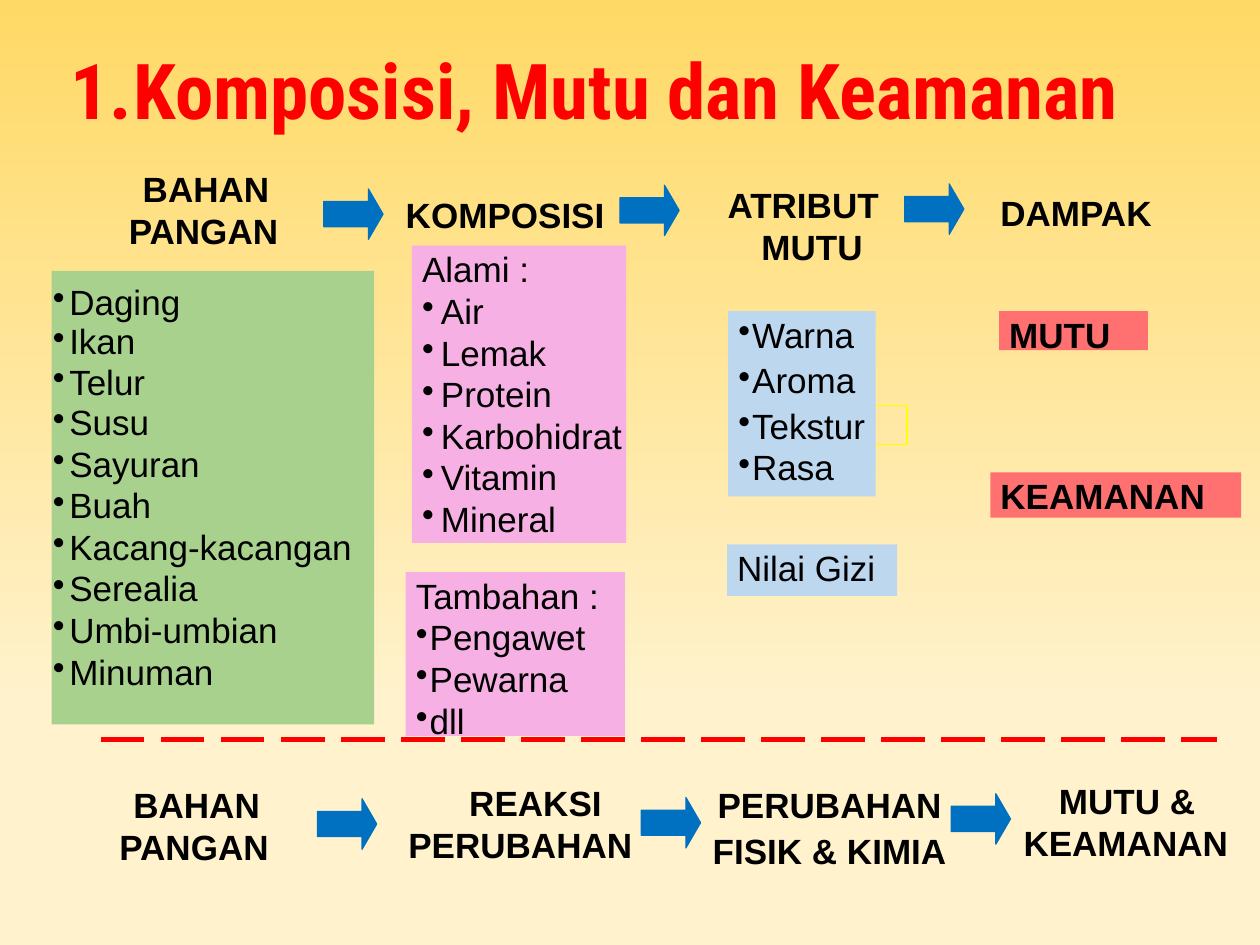
from dataclasses import dataclass

from lxml import etree
from pptx import Presentation
from pptx.dml.color import RGBColor
from pptx.enum.dml import MSO_LINE
from pptx.enum.shapes import MSO_CONNECTOR, MSO_SHAPE
from pptx.enum.text import MSO_ANCHOR, PP_ALIGN
from pptx.oxml.ns import qn
from pptx.util import Inches, Pt

RECTANGLE, RIGHT_ARROW = MSO_SHAPE.RECTANGLE, MSO_SHAPE.RIGHT_ARROW
STRAIGHT, LONG_DASH = MSO_CONNECTOR.STRAIGHT, MSO_LINE.LONG_DASH
TOP, LEFT, CENTER = MSO_ANCHOR.TOP, PP_ALIGN.LEFT, PP_ALIGN.CENTER


@dataclass(frozen=True)
class Theme:
    sky: str = "FFD966"
    cream: str = "FFF2CC"
    red: str = "FF0000"
    yellow: str = "FFFF00"
    black: str = "000000"
    blue: str = "0070C0"
    green: str = "A9D18E"
    pink: str = "F6B0E4"
    pale_blue: str = "BDD7EE"
    coral: str = "FF7171"
    title_font: str = "Roboto Condensed"
    body_font: str = "Arial"
    title_size: int = 44
    body_size: int = 20


THEME = Theme()


@dataclass(frozen=True)
class Area:
    left: float
    top: float
    width: float
    height: float

    def lengths(self):
        return [Inches(n) for n in (self.left, self.top, self.width, self.height)]


@dataclass(frozen=True)
class Entry:
    text: str
    before: float = 0.7
    bullet: bool = True
    spacing: object = 0.96


@dataclass(frozen=True)
class Panel:
    area: Area
    color: str
    entries: list
    margin: float = 0.08
    hanging: float = 0
    top_inset: float = 0.04
    bold: bool = False


@dataclass(frozen=True)
class Heading:
    area: Area
    lines: list
    margin: float = 0.08
    indent: float = 0
    spacing: float = 1.0
    align: object = CENTER


def color_of(value: str) -> RGBColor:
    return RGBColor.from_string(value)


def prepare_frame(box, top_inset: float):
    frame = box.text_frame
    frame.word_wrap = True
    frame.vertical_anchor = TOP
    frame.margin_left = frame.margin_right = frame.margin_bottom = 0
    frame.margin_top = Inches(top_inset)
    return frame


def add_para(frame, index: int, text: str, margin: float, indent: float):
    para = frame.paragraphs[0] if index == 0 else frame.add_paragraph()
    para.text = text
    props = para._p.get_or_add_pPr()
    props.set("marL", str(Inches(margin)))
    props.set("indent", str(Inches(indent)))
    return para


def style_para(para, spacing, bold: bool, align=LEFT) -> None:
    para.alignment = align
    para.line_spacing = spacing
    para.font.name = THEME.body_font
    para.font.size = Pt(THEME.body_size)
    para.font.bold = bold
    para.font.color.rgb = color_of(THEME.black)


def draw_shape(page, kind, area: Area, fill: str | None, line: str | None = None):
    shape = page.shapes.add_shape(kind, *area.lengths())
    shape.shadow.inherit = False
    if fill:
        shape.fill.solid()
        shape.fill.fore_color.rgb = color_of(fill)
    else:
        shape.fill.background()
    if line:
        shape.line.color.rgb = color_of(line)
        shape.line.width = Pt(0.72)
    else:
        shape.line.fill.background()
    return shape


def draw_panel(page, panel: Panel) -> None:
    frame = prepare_frame(draw_shape(page, RECTANGLE, panel.area, panel.color), panel.top_inset)
    for index, entry in enumerate(panel.entries):
        if entry.bullet:
            para = add_para(frame, index, entry.text, panel.margin, -panel.hanging)
            bullet = etree.SubElement(para._p.get_or_add_pPr(), qn("a:buChar"))
            bullet.set("char", "•")
        else:
            para = add_para(frame, index, entry.text, 0.08, 0)
        if index:
            para.space_before = Pt(entry.before)
        style_para(para, entry.spacing, panel.bold)


def draw_heading(page, heading: Heading) -> None:
    frame = prepare_frame(page.shapes.add_textbox(*heading.area.lengths()), 0.04)
    for index, line in enumerate(heading.lines):
        para = add_para(frame, index, line, heading.margin, heading.indent)
        if index:
            para.space_before = Pt(3.1)
        style_para(para, heading.spacing, True, heading.align)


def draw_arrow(page, left: float, top: float) -> None:
    arrow = draw_shape(page, RIGHT_ARROW, Area(left, top, 0.47, 0.4), THEME.blue, THEME.blue)
    arrow.adjustments[0] = 0.5
    arrow.adjustments[1] = 0.29


def draw_title(page) -> None:
    box = page.shapes.add_textbox(*Area(0.55, 0.61, 9.11, 0.74).lengths())
    para = add_para(prepare_frame(box, 0.02), 0, "1.\tKomposisi, Mutu dan Keamanan", 0.01, 0)
    tabs = etree.SubElement(para._p.get_or_add_pPr(), qn("a:tabLst"))
    etree.SubElement(tabs, qn("a:tab"), pos=str(Inches(0.91)), algn="l")
    para.line_spacing = Pt(31.5)
    para.font.name = THEME.title_font
    para.font.size = Pt(THEME.title_size)
    para.font.bold = True
    para.font.color.rgb = color_of(THEME.red)


def draw_divider(page) -> None:
    ends = [Inches(n) for n in (0.8, 5.87, 9.66, 5.87)]
    divider = page.shapes.add_connector(STRAIGHT, *ends)
    divider.line.color.rgb = color_of(THEME.red)
    divider.line.width = Pt(3.12)
    divider.line.dash_style = LONG_DASH
    etree.SubElement(divider._element.spPr, qn("a:effectLst"))


def paint_background(page) -> None:
    fill = page.background.fill
    fill.gradient()
    fill.gradient_angle = 270
    for stop, color, position in zip(fill.gradient_stops, (THEME.sky, THEME.cream), (0, 0.74)):
        stop.color.rgb = color_of(color)
        stop.position = position


FOODS = [Entry("Daging", spacing=Pt(14.5))]
FOODS += [Entry(name, before=0) for name in ("Ikan", "Telur", "Susu")]
FOODS += [Entry(name) for name in ("Sayuran", "Buah", "Kacang-kacangan", "Serealia",
                                   "Umbi-umbian", "Minuman")]
NATURAL = [Entry("Alami :", bullet=False)]
NATURAL += [Entry(name) for name in ("Air", "Lemak", "Protein", "Karbohidrat", "Vitamin", "Mineral")]
ADDED = [Entry("Tambahan :", bullet=False)]
ADDED += [Entry(name) for name in ("Pengawet", "Pewarna", "dll")]
TRAITS = [Entry(name, before=2.9) for name in ("Warna", "Aroma", "Tekstur")] + [Entry("Rasa")]

PANELS = [
    Panel(Area(0.41, 2.15, 2.56, 3.6), THEME.green, FOODS, 0.14, 0.13, top_inset=0.21),
    Panel(Area(7.86, 3.75, 1.99, 0.36), THEME.coral, [Entry("KEAMANAN", bullet=False)], bold=True),
    Panel(Area(3.22, 4.54, 1.74, 1.3), THEME.pink, ADDED, 0.19, 0.11),
    Panel(Area(5.78, 2.47, 1.17, 1.47), THEME.pale_blue, TRAITS, 0.19, 0.11),
    Panel(Area(7.93, 2.47, 1.18, 0.31), THEME.coral, [Entry("MUTU", bullet=False)], bold=True),
    Panel(Area(3.27, 1.95, 1.7, 2.36), THEME.pink, NATURAL, 0.23, 0.15),
    Panel(Area(5.77, 4.32, 1.35, 0.41), THEME.pale_blue, [Entry("Nilai Gizi", bullet=False)]),
]
HEADINGS = [
    Heading(Area(7.86, 1.5, 1.37, 0.26), ["DAMPAK"], spacing=0.96, align=LEFT),
    Heading(Area(3.14, 1.52, 1.69, 0.29), ["KOMPOSISI"], spacing=0.96, align=LEFT),
    Heading(Area(5.47, 1.42, 1.73, 0.53), ["ATRIBUT MUTU"], 0.22, -0.14),
    Heading(Area(0.58, 1.29, 1.99, 0.54), ["BAHAN PANGAN"], indent=0.04),
    Heading(Area(5.38, 6.2, 2.33, 0.53), ["PERUBAHAN", "FISIK & KIMIA"], spacing=0.96),
    Heading(Area(3.04, 6.16, 2.1, 0.53), ["REAKSI PERUBAHAN"], indent=0.24),
    Heading(Area(0.49, 6.18, 2.02, 0.32), ["BAHAN PANGAN"], indent=0.04),
    Heading(Area(7.94, 6.15, 1.91, 0.53), ["MUTU & KEAMANAN"], indent=0.02),
]
ARROWS = [(2.57, 1.5), (4.92, 1.47), (7.18, 1.46), (2.52, 6.34), (5.09, 6.33), (7.55, 6.3)]


def main() -> None:
    deck = Presentation()
    deck.slide_width, deck.slide_height = Inches(10), Inches(7.5)
    page = deck.slides.add_slide(deck.slide_layouts[6])
    paint_background(page)
    draw_title(page)
    draw_shape(page, RECTANGLE, Area(6.5, 3.22, 0.7, 0.31), None, THEME.yellow)
    for panel in PANELS:
        draw_panel(page, panel)
    for heading in HEADINGS:
        draw_heading(page, heading)
    draw_divider(page)
    for left, top in ARROWS:
        draw_arrow(page, left, top)
    deck.save("out.pptx")


if __name__ == "__main__":
    main()
